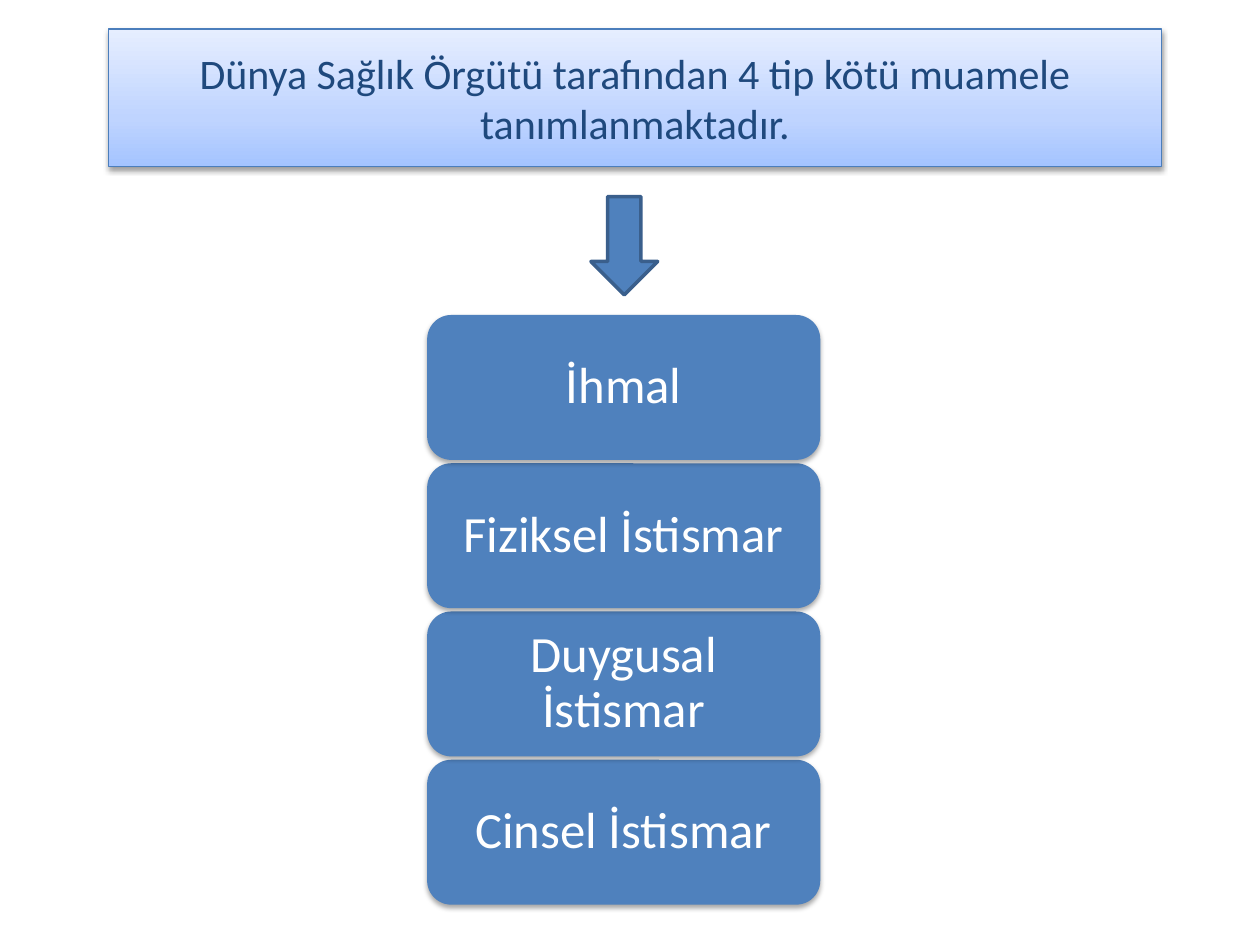
from lxml import etree
from pptx import Presentation
from pptx.dml.color import RGBColor
from pptx.enum.shapes import MSO_SHAPE
from pptx.enum.text import MSO_ANCHOR, MSO_AUTO_SIZE, PP_ALIGN
from pptx.oxml import parse_xml
from pptx.oxml.ns import nsdecls, qn
from pptx.util import Inches, Pt

ROUNDED = MSO_SHAPE.ROUNDED_RECTANGLE
DOWN_ARROW = MSO_SHAPE.DOWN_ARROW
MIDDLE = MSO_ANCHOR.MIDDLE
NO_AUTOFIT = MSO_AUTO_SIZE.NONE
CENTER = PP_ALIGN.CENTER

TITLE_ONLY = 5
BLUE = "4F81BD"
TITLE = "Dünya Sağlık Örgütü tarafından 4 tip kötü muamele tanımlanmaktadır."
TITLE_STOPS = [(0, "A4C4FF"), (35, "BFD4FF"), (100, "E6EEFF")]
TYPES = ["İhmal", "Fiziksel İstismar", "Duygusal İstismar", "Cinsel İstismar"]
STACK_LEFT, STACK_TOP, STACK_BOTTOM = 3.39, 2.5, 7.18
BOX_WIDTH, BOX_HEIGHT = 3.12, 1.15


def color(hex_code):
    return RGBColor.from_string(hex_code)


def set_format(target, values):
    for name, value in values.items():
        setattr(target, name, value)


def set_line(shape, hex_code, width):
    shape.line.color.rgb = color(hex_code)
    shape.line.width = Pt(width)


def add_shadow(shape, opacity, distance):
    """Add a soft black shadow below the shape."""
    properties = shape._element.spPr
    for effects in properties.findall(qn("a:effectLst")):
        properties.remove(effects)
    properties.append(parse_xml(
        f'<a:effectLst {nsdecls("a")}><a:outerShdw blurRad="{Pt(3.1)}" '
        f'dist="{Pt(distance)}" dir="5400000" rotWithShape="0">'
        f'<a:srgbClr val="000000"><a:alpha val="{opacity * 1000}"/></a:srgbClr>'
        '</a:outerShdw></a:effectLst>'))


def set_text(shape, text, size, hex_code, insets, spacing):
    frame = shape.text_frame
    frame.text = text
    side, edge = map(Inches, insets)
    set_format(frame, {
        "word_wrap": True, "auto_size": NO_AUTOFIT, "vertical_anchor": MIDDLE,
        "margin_left": side, "margin_right": side,
        "margin_top": edge, "margin_bottom": edge})
    para = frame.paragraphs[0]
    set_format(para, {"alignment": CENTER, "line_spacing": spacing})
    set_format(para.font, {"name": "Calibri", "size": Pt(size)})
    para.font.color.rgb = color(hex_code)


def add_solid_shape(page, kind, left, top, width, height):
    shape = page.shapes.add_shape(kind, *map(Inches, (left, top, width, height)))
    shape.shadow.inherit = False
    shape.fill.solid()
    shape.fill.fore_color.rgb = color(BLUE)
    return shape


def format_title(page):
    """Turn the title placeholder into a rounded bar with a vertical gradient."""
    title = page.shapes.title
    set_format(title, {"left": Inches(0.86), "top": Inches(0.23),
                       "width": Inches(8.36), "height": Inches(1.09)})
    properties = title._element.spPr
    geometry = etree.SubElement(properties, qn("a:prstGeom"), prst="roundRect")
    etree.SubElement(geometry, qn("a:avLst"))
    gradient = etree.SubElement(properties, qn("a:gradFill"), rotWithShape="1")
    stops = etree.SubElement(gradient, qn("a:gsLst"))
    for position, hex_code in TITLE_STOPS:
        stop = etree.SubElement(stops, qn("a:gs"), pos=str(position * 1000))
        etree.SubElement(stop, qn("a:srgbClr"), val=hex_code)
    etree.SubElement(gradient, qn("a:lin"), ang="16200000", scaled="0")
    set_line(title, "4B7EBC", 0.75)
    add_shadow(title, 38, 1.6)
    set_text(title, TITLE, 24, "1F497D", (0.1, 0.05), 1.0)


def add_type_stack(page):
    """Stack the boxes from the bottom up, so each shadow falls on the next box."""
    pitch = (STACK_BOTTOM - STACK_TOP - BOX_HEIGHT) / (len(TYPES) - 1)
    for row, name in reversed(list(enumerate(TYPES))):
        box = add_solid_shape(page, ROUNDED, STACK_LEFT, STACK_TOP + row * pitch,
                              BOX_WIDTH, BOX_HEIGHT)
        box.line.fill.background()
        add_shadow(box, 35, 1.8)
        set_text(box, name, 29, "FFFFFF", (0.12, 0.06), 0.9)


def main():
    deck = Presentation()
    set_format(deck, {"slide_width": Inches(10), "slide_height": Inches(7.5)})
    page = deck.slides.add_slide(deck.slide_layouts[TITLE_ONLY])
    format_title(page)
    add_type_stack(page)
    arrow = add_solid_shape(page, DOWN_ARROW, 4.69, 1.56, 0.53, 0.78)
    set_line(arrow, "3A5F8C", 2)
    deck.save("out.pptx")


if __name__ == "__main__":
    main()
